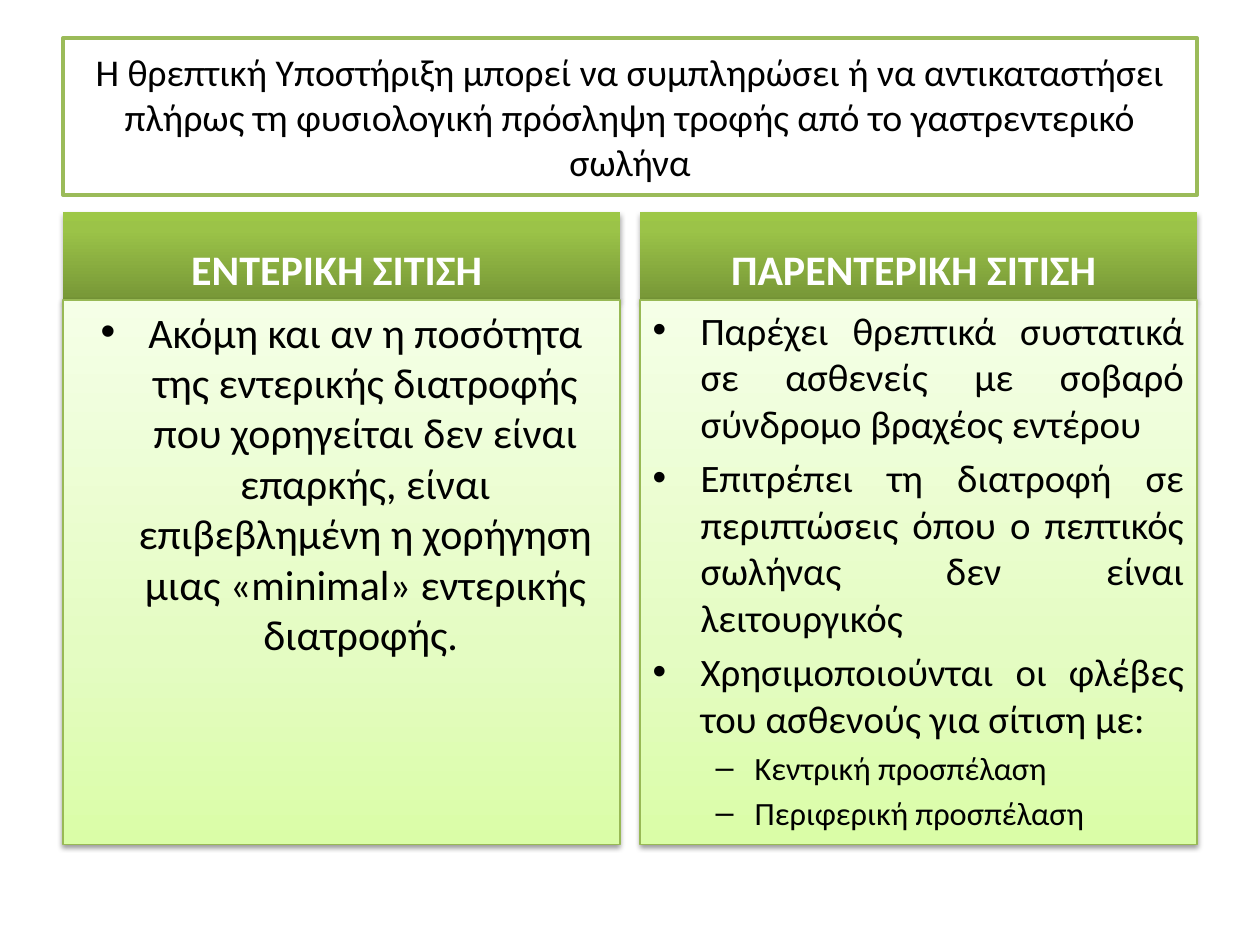
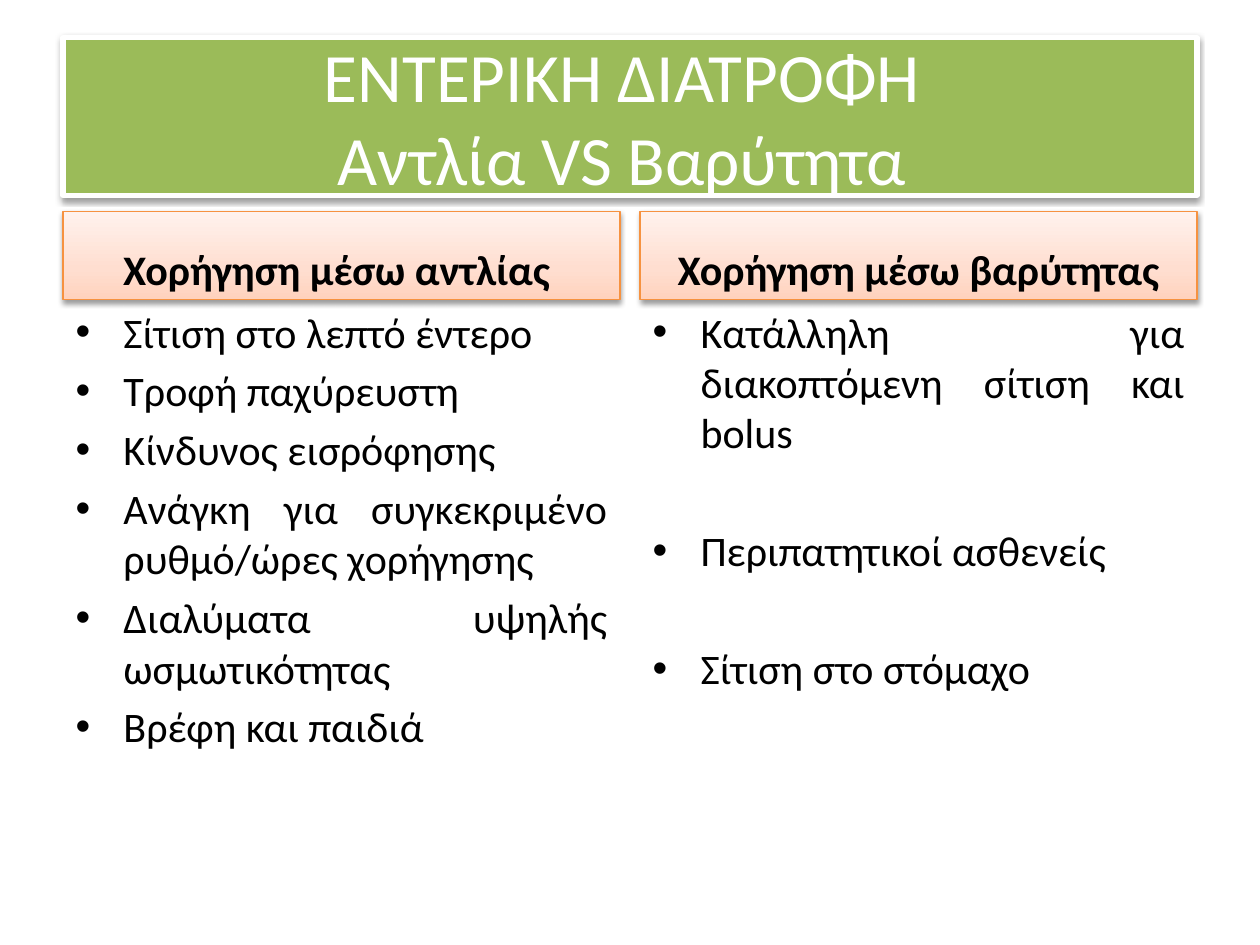
from dataclasses import dataclass
from typing import NamedTuple, Optional

from lxml.etree import SubElement
from pptx import Presentation
from pptx.dml.color import RGBColor
from pptx.enum.text import MSO_ANCHOR, MSO_AUTO_SIZE, PP_ALIGN
from pptx.oxml.ns import qn
from pptx.util import Inches, Pt

COLORS = {
    "black": "000000", "white": "FFFFFF", "green": "9BBB59",
    "leaf_line": "98B955", "orange_line": "F69240",
}
FONT = "Calibri"
SLIDE_WIDTH, SLIDE_HEIGHT = 10, 7.5
MARGIN = 0.05 * SLIDE_WIDTH
GUTTER = 0.16
CONTENT_WIDTH = SLIDE_WIDTH - 2 * MARGIN
COLUMN_WIDTH = (CONTENT_WIDTH - GUTTER) / 2
COMPARISON_LAYOUT = 4


class Row(NamedTuple):
    top: float
    height: float


TITLE_ROW = Row(0.3, 1.25)
HEADING_ROW = Row(1.68, 0.7)
LIST_ROW = Row(HEADING_ROW.top + HEADING_ROW.height, 4.32)


class Shadow(NamedTuple):
    opacity: int
    distance: float
    blur: float = 3.1


@dataclass(frozen=True)
class Look:
    fill: Optional[str] = None
    gradient: tuple[tuple[int, str], ...] = ()
    line: Optional[str] = None
    line_width: float = 0.75
    shadow: Optional[Shadow] = None


SOFT_SHADOW = Shadow(38, 1.6)
OUTLINED = Look(fill="white", line="green", line_width=2)
SOLID_GREEN = Look(fill="green", line="white", line_width=3, shadow=SOFT_SHADOW)
DEEP_GREEN = Look(gradient=((0, "779737"), (80, "9BC348"), (100, "9DC746")),
                  shadow=Shadow(35, 1.8))
PALE_GREEN = Look(gradient=((0, "DAFDA7"), (35, "E4FCC2"), (100, "F5FFE7")),
                  line="leaf_line", shadow=SOFT_SHADOW)
PALE_ORANGE = Look(gradient=((0, "FFD2BD"), (35, "FFDED0"), (100, "FFF2ED")),
                   line="orange_line", shadow=SOFT_SHADOW)
PLAIN = Look()


class Bullet(NamedTuple):
    mark: str
    margin: float
    hanging: float


BULLETS = (Bullet("•", 0.38, 0.38), Bullet("–", 0.81, 0.31))


class Item(NamedTuple):
    text: str
    level: int = 0


@dataclass(frozen=True)
class Column:
    heading: str
    items: tuple[Item, ...]
    sizes: tuple[float, ...] = (24,)
    align: PP_ALIGN = PP_ALIGN.JUSTIFY
    gap: Optional[float] = None


@dataclass(frozen=True)
class Comparison:
    title: str
    title_size: float
    title_color: str
    title_look: Look
    heading_color: str
    heading_look: Look
    list_look: Look
    columns: tuple[Column, Column]


def color(name: str) -> RGBColor:
    return RGBColor.from_string(COLORS[name])


def place(box, left: float, width: float, row: Row) -> None:
    box.left, box.top = Inches(left), Inches(row.top)
    box.width, box.height = Inches(width), Inches(row.height)


def paint_gradient(box, stops: tuple[tuple[int, str], ...]) -> None:
    """Fill from the bottom edge upward with any number of stops."""
    box.fill.gradient()
    box.fill.gradient_angle = 90
    stop_list = box._element.spPr.find(qn("a:gradFill")).find(qn("a:gsLst"))
    for stop in list(stop_list):
        stop_list.remove(stop)
    for position, value in stops:
        stop = SubElement(stop_list, qn("a:gs"), pos=str(position * 1000))
        SubElement(stop, qn("a:srgbClr"), val=value)


def cast_shadow(box, shadow: Shadow) -> None:
    effects = box._element.spPr.find(qn("a:effectLst"))
    outer = SubElement(effects, qn("a:outerShdw"), blurRad=str(Pt(shadow.blur)),
                       dist=str(Pt(shadow.distance)), dir="5400000", rotWithShape="0")
    tint = SubElement(outer, qn("a:srgbClr"), val=COLORS["black"])
    SubElement(tint, qn("a:alpha"), val=str(shadow.opacity * 1000))


def dress(box, look: Look) -> None:
    if look.gradient:
        paint_gradient(box, look.gradient)
    elif look.fill:
        box.fill.solid()
        box.fill.fore_color.rgb = color(look.fill)
    else:
        box.fill.background()
    if look.line:
        box.line.color.rgb = color(look.line)
        box.line.width = Pt(look.line_width)
    else:
        box.line.fill.background()
    box.shadow.inherit = False
    if look.shadow:
        cast_shadow(box, look.shadow)


def set_bullet(paragraph, bullet: Optional[Bullet]) -> None:
    properties = paragraph._p.get_or_add_pPr()
    margin, hanging = (bullet.margin, bullet.hanging) if bullet else (0, 0)
    properties.set("marL", str(Inches(margin)))
    properties.set("indent", str(-Inches(hanging)))
    if bullet:
        SubElement(properties, qn("a:buChar"), char=bullet.mark)
    else:
        SubElement(properties, qn("a:buNone"))


def write(paragraph, text: str, *, size: float, ink: str = "black", bold: bool = False,
          align: PP_ALIGN = PP_ALIGN.CENTER, bullet: Optional[Bullet] = None,
          space_before: float = 0) -> None:
    set_bullet(paragraph, bullet)
    paragraph.alignment = align
    paragraph.space_before = Pt(space_before)
    for number, line in enumerate(text.split("\n")):
        if number:
            paragraph.add_line_break()
        span = paragraph.add_run()
        span.text = line
        span.font.name, span.font.size, span.font.bold = FONT, Pt(size), bold
        span.font.color.rgb = color(ink)


def open_frame(box, anchor: MSO_ANCHOR):
    frame = box.text_frame
    frame.word_wrap = True
    frame.auto_size = MSO_AUTO_SIZE.NONE
    frame.vertical_anchor = anchor
    return frame


def fill_list(box, column: Column) -> None:
    frame = open_frame(box, MSO_ANCHOR.TOP)
    for number, item in enumerate(column.items):
        paragraph = frame.add_paragraph() if number else frame.paragraphs[0]
        paragraph.level = item.level
        size = column.sizes[item.level]
        gap = column.gap or 0.2 * size
        write(paragraph, item.text, size=size, align=column.align,
              bullet=BULLETS[item.level], space_before=gap if number else 0)


def add_comparison(deck, content: Comparison) -> None:
    page = deck.slides.add_slide(deck.slide_layouts[COMPARISON_LAYOUT])
    title, *boxes = page.placeholders
    place(title, MARGIN, CONTENT_WIDTH, TITLE_ROW)
    dress(title, content.title_look)
    write(open_frame(title, MSO_ANCHOR.MIDDLE).paragraphs[0], content.title,
          size=content.title_size, ink=content.title_color)
    for number, column in enumerate(content.columns):
        heading, body = boxes[2 * number:2 * number + 2]
        left = MARGIN + number * (COLUMN_WIDTH + GUTTER)
        place(heading, left, COLUMN_WIDTH, HEADING_ROW)
        dress(heading, content.heading_look)
        write(open_frame(heading, MSO_ANCHOR.BOTTOM).paragraphs[0], column.heading,
              size=24, ink=content.heading_color, bold=True)
        place(body, left, COLUMN_WIDTH, LIST_ROW)
        dress(body, content.list_look)
        fill_list(body, column)


NUTRITION_SUPPORT = Comparison(
    title="Η θρεπτική Υποστήριξη μπορεί να συμπληρώσει ή να αντικαταστήσει πλήρως "
          "τη φυσιολογική πρόσληψη τροφής από το γαστρεντερικό σωλήνα",
    title_size=21.6, title_color="black", title_look=OUTLINED,
    heading_color="white", heading_look=DEEP_GREEN, list_look=PALE_GREEN,
    columns=(
        Column("ΕΝΤΕΡΙΚΗ ΣΙΤΙΣΗ ", (
            Item("Ακόμη και αν η ποσότητα της εντερικής διατροφής που χορηγείται δεν "
                 "είναι επαρκής, είναι επιβεβλημένη η χορήγηση μιας «minimal» "
                 "εντερικής διατροφής. "),
        ), align=PP_ALIGN.CENTER),
        Column("ΠΑΡΕΝΤΕΡΙΚΗ ΣΙΤΙΣΗ ", (
            Item("Παρέχει θρεπτικά συστατικά σε ασθενείς με σοβαρό σύνδρομο "
                 "βραχέος εντέρου "),
            Item("Επιτρέπει τη διατροφή σε περιπτώσεις όπου ο πεπτικός σωλήνας "
                 "δεν είναι λειτουργικός"),
            Item("Χρησιμοποιούνται οι φλέβες του ασθενούς για σίτιση με:"),
            Item("Κεντρική προσπέλαση ", 1),
            Item("Περιφερική προσπέλαση ", 1),
        ), sizes=(22.2, 18.5)),
    ),
)

PUMP_OR_GRAVITY = Comparison(
    title="ΕΝΤΕΡΙΚΗ ΔΙΑΤΡΟΦΗ \nΑντλία VS Βαρύτητα ",
    title_size=39.6, title_color="white", title_look=SOLID_GREEN,
    heading_color="black", heading_look=PALE_ORANGE, list_look=PLAIN,
    columns=(
        Column("Χορήγηση μέσω αντλίας ", (
            Item("Σίτιση στο λεπτό έντερο "),
            Item("Τροφή παχύρευστη "),
            Item("Κίνδυνος εισρόφησης "),
            Item("Ανάγκη για συγκεκριμένο ρυθμό/ώρες χορήγησης "),
            Item("Διαλύματα υψηλής ωσμωτικότητας "),
            Item("Βρέφη και παιδιά "),
        )),
        Column("Χορήγηση μέσω βαρύτητας", (
            Item("Κατάλληλη για διακοπτόμενη σίτιση και bolus "),
            Item("Περιπατητικοί ασθενείς "),
            Item("Σίτιση στο στόμαχο "),
        ), gap=38.5),
    ),
)


def main() -> None:
    deck = Presentation()
    deck.slide_width, deck.slide_height = Inches(SLIDE_WIDTH), Inches(SLIDE_HEIGHT)
    for content in (NUTRITION_SUPPORT, PUMP_OR_GRAVITY):
        add_comparison(deck, content)
    deck.save("out.pptx")


if __name__ == "__main__":
    main()
